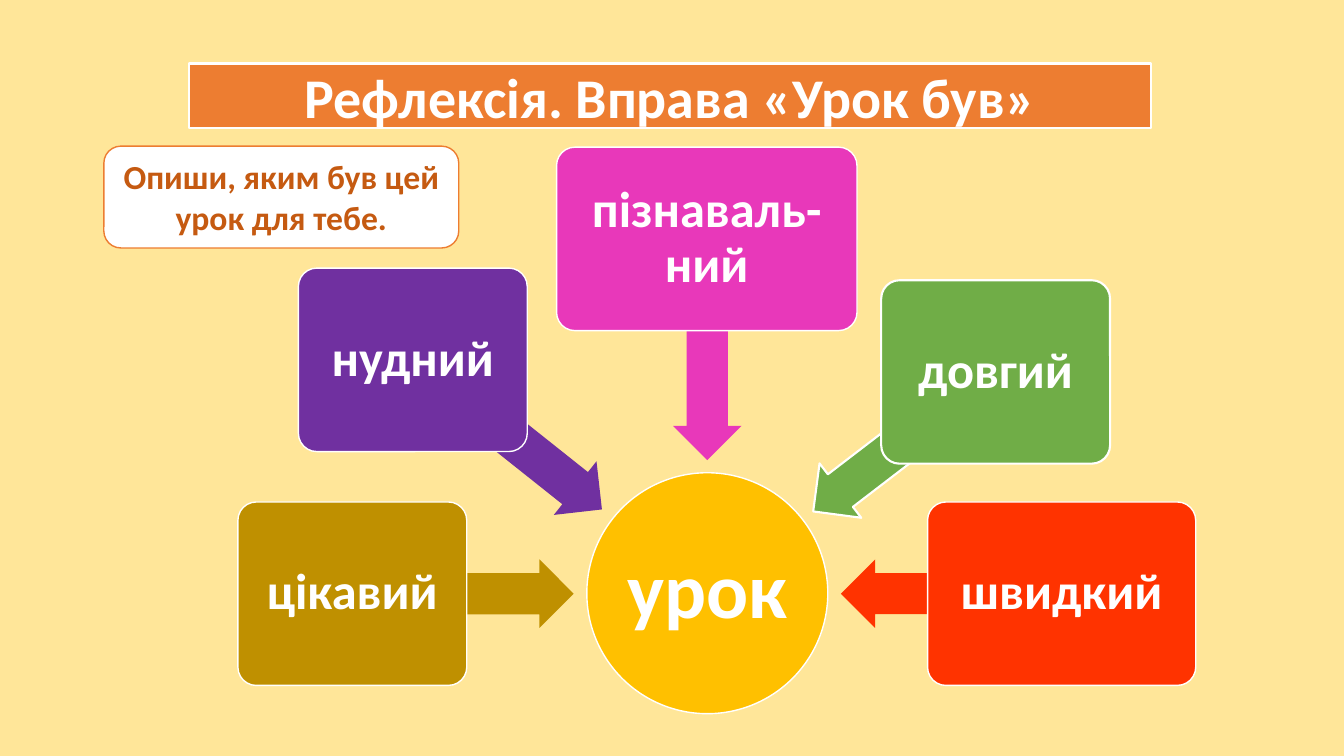
import pptx
import pptx.util
import pptx.dml.color
import pptx.enum.shapes
import pptx.enum.text

Inches = pptx.util.Inches
Pt = pptx.util.Pt
Color = pptx.dml.color.RGBColor.from_string
Kind = pptx.enum.shapes.MSO_SHAPE
Anchor = pptx.enum.text.MSO_ANCHOR
Fit = pptx.enum.text.MSO_AUTO_SIZE
Align = pptx.enum.text.PP_ALIGN

theme = {
    "font": "Calibri",
    "back": "FFE699",
    "white": "FFFFFF",
    "orange": "ED7D31",
    "brown": "C55A11",
    "gold": "FFC000",
    "olive": "BF9000",
    "purple": "7030A0",
    "pink": "E838BA",
    "green": "70AD47",
    "red": "FF3300",
    "title": 40,
    "hub": 56,
    "word": 36,
    "note": 24,
}

deck = pptx.Presentation()
deck.slide_width = Inches(13.33)
deck.slide_height = Inches(7.5)
slide = deck.slides.add_slide(deck.slide_layouts[6])
slide.background.fill.solid()
slide.background.fill.fore_color.rgb = Color(theme["back"])


def draw(kind, box, fill, line=None, width=1, adjust=()):
    shape = slide.shapes.add_shape(kind, *map(Inches, box))
    shape.shadow.inherit = False
    shape.fill.solid()
    shape.fill.fore_color.rgb = Color(theme[fill])
    if line:
        shape.line.color.rgb = Color(theme[line])
        shape.line.width = Pt(width)
    else:
        shape.line.fill.background()
    for index, value in enumerate(adjust):
        shape.adjustments[index] = value
    return shape


def write(shape, text, size, color="white", pad=None, space=None, **extra):
    frame = shape.text_frame
    form = {"word_wrap": True, "vertical_anchor": Anchor.MIDDLE} | extra
    if pad is not None:
        for side in ("left", "top", "right", "bottom"):
            form["margin_" + side] = Inches(pad)
    for name, value in form.items():
        setattr(frame, name, value)
    para = frame.paragraphs[0]
    para.text = text
    para.alignment = Align.CENTER
    para.line_spacing = space
    style = {"name": theme["font"], "size": Pt(theme[size]), "bold": True}
    for name, value in style.items():
        setattr(para.runs[0].font, name, value)
    para.runs[0].font.color.rgb = Color(theme[color])


title = draw(Kind.RECTANGLE, (1.87, 0.63, 9.55, 0.64), "orange", "white", 1.5)
write(title, "Рефлексія. Вправа «Урок був»", "title")

hub = draw(Kind.OVAL, (5.82, 4.69, 2.39, 2.39), "gold", "white")
write(hub, "урок", "hub", pad=0.04, space=0.9)

high = 1.82
thick = 0.68
words = [
    ("цікавий", "olive", (2.36, 4.98, 2.27), (3.5, 5.55, 2.19), 180, None, 1),
    ("нудний", "purple", (2.96, 2.66, 2.27), (3.84, 3.97, 2.39), 218.5, None, 1),
    ("пізнаваль-ний", "pink", (5.52, 1.46, 2.98), (5.92, 3.13, 2.19), 270, None, 1),
    ("довгий", "green", (8.74, 2.78, 2.27), (7.83, 4.04, 2.28), 322.5, "white", 1.5),
    ("швидкий", "red", (9.2, 4.98, 2.66), (8.34, 5.55, 2.19), 0, None, 1),
]
for text, color, card, shaft, turn, edge, width in words:
    arrow = draw(Kind.LEFT_ARROW, (*shaft, thick), color, edge, width, (0.6, 0.5))
    arrow.rotation = turn
    block = draw(Kind.ROUNDED_RECTANGLE, (*card, high), color, "white", width, (0.1,))
    write(block, text, "word", pad=0.07, space=0.9)

note = draw(Kind.ROUNDED_RECTANGLE, (1.03, 1.45, 3.52, 1.01), "white", "orange")
write(note, "Опиши, яким був цей урок для тебе.", "note", "brown",
      vertical_anchor=Anchor.TOP, auto_size=Fit.SHAPE_TO_FIT_TEXT)

deck.save("out.pptx")
